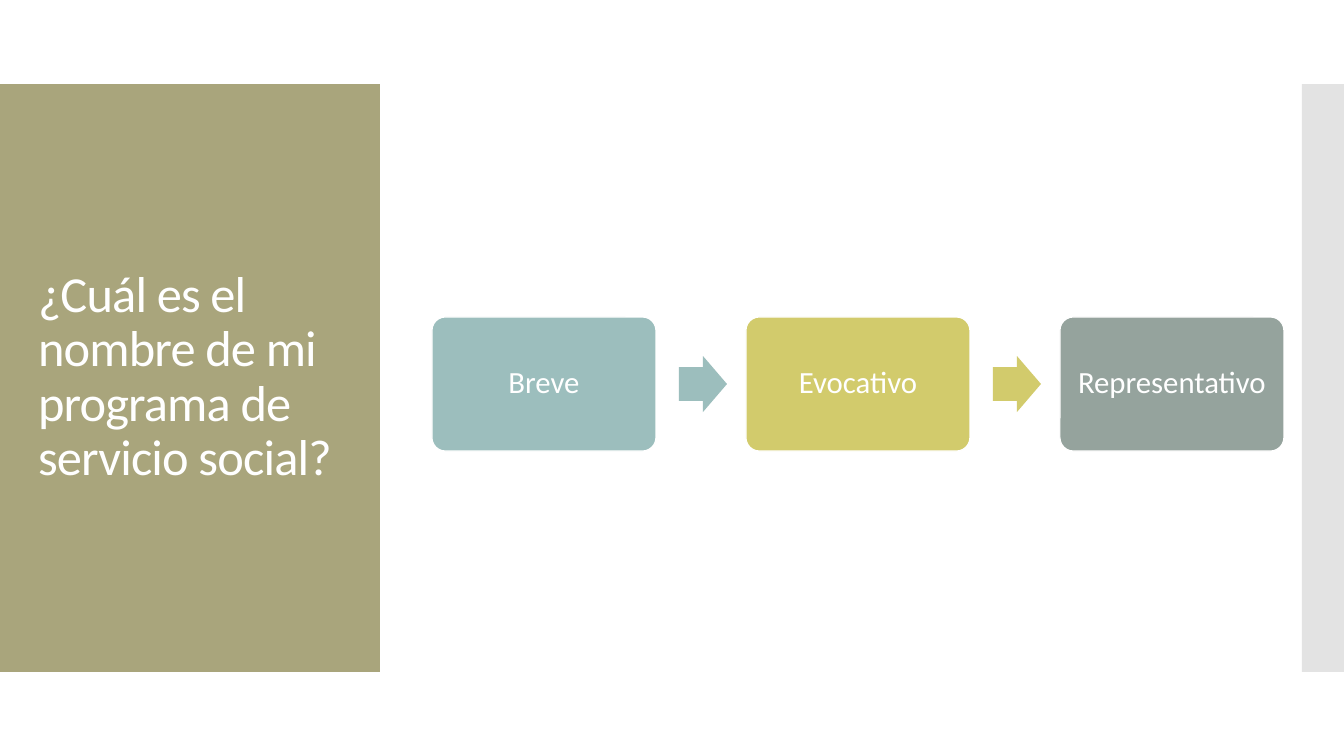
from lxml.etree import SubElement
from pptx import Presentation
from pptx.dml.color import RGBColor
from pptx.enum.shapes import MSO_SHAPE as Shape
from pptx.enum.text import MSO_ANCHOR as Anchor, PP_ALIGN as Align
from pptx.oxml.ns import qn
from pptx.util import Emu, Pt

# Content
TITLE = "¿Cuál es el nombre de mi programa de servicio social?"
STEPS = [("Breve", "9CBEBD"), ("Evocativo", "D2CB6C"), ("Representativo", "95A39D")]
WHITE = "FFFFFF"
FONT = {"name": "Calibri"}

# Layout in px: left, top, width, height
SLIDE_SIZE = (1344, 756)
TITLE_PANEL = (0, 84, 380, 588)
SIDE_STRIP = (1302, 84, 42, 588)
TITLE_BOX = (28, 124, 325, 507)
STEP_LEFT, STEP_WIDTH, STEP_HEIGHT, STEP_PITCH = 432, 224, 134, 314
ARROW_WIDTH, ARROW_HEIGHT = 48, 56
MIDDLE = 384
EMU_PER_INCH, PX_PER_INCH = 914400, 100.8


def px(length):
    return Emu(round(length * EMU_PER_INCH / PX_PER_INCH))


def color(hex_value):
    return RGBColor.from_string(hex_value)


def add_block(slide, kind, box, fill, adjustments=()):
    shape = slide.shapes.add_shape(kind, *map(px, box))
    shape.shadow.inherit = False
    shape.fill.solid()
    shape.fill.fore_color.rgb = color(fill)
    shape.line.fill.background()
    for index, value in enumerate(adjustments):
        shape.adjustments[index] = value
    return shape


def write(shape, text, size, align, inset):
    frame = shape.text_frame
    frame_format = {"word_wrap": True, "vertical_anchor": Anchor.MIDDLE}
    for side in ("left", "right", "top", "bottom"):
        frame_format["margin_" + side] = px(inset)
    for name, value in frame_format.items():
        setattr(frame, name, value)
    paragraph = frame.paragraphs[0]
    paragraph.alignment = align
    paragraph.line_spacing = 0.9
    run = paragraph.add_run()
    run.text = text
    for name, value in {**FONT, "size": Pt(size)}.items():
        setattr(run.font, name, value)
    run.font.color.rgb = color(WHITE)
    return run


def main():
    presentation = Presentation()
    presentation.slide_width, presentation.slide_height = map(px, SLIDE_SIZE)
    slide = presentation.slides.add_slide(presentation.slide_layouts[6])

    # Title panel and translucent side strip
    add_block(slide, Shape.RECTANGLE, TITLE_PANEL, "A9A57C")
    strip = add_block(slide, Shape.RECTANGLE, SIDE_STRIP, "C8C8C8")
    strip_color = strip.fill._xPr.find(qn("a:solidFill"))[0]
    SubElement(strip_color, qn("a:alpha"), val="50000")

    # Title with slightly tightened letters
    title = slide.shapes.add_textbox(*map(px, TITLE_BOX))
    run = write(title, TITLE, 36, Align.LEFT, 10)
    run.font._element.set("spc", "-60")

    # Steps, each followed by an arrow in its own colour
    gap = STEP_PITCH - STEP_WIDTH
    for index, (label, fill) in enumerate(STEPS):
        left = STEP_LEFT + index * STEP_PITCH
        box = (left, MIDDLE - STEP_HEIGHT / 2, STEP_WIDTH, STEP_HEIGHT)
        step = add_block(slide, Shape.ROUNDED_RECTANGLE, box, fill, [0.1])
        step.line.color.rgb = color(WHITE)
        step.line.width = Pt(0.85)
        write(step, label, 22, Align.CENTER, 9)
        if index < len(STEPS) - 1:
            arrow_left = left + STEP_WIDTH + (gap - ARROW_WIDTH) / 2 + 2
            arrow_box = (arrow_left, MIDDLE - ARROW_HEIGHT / 2, ARROW_WIDTH, ARROW_HEIGHT)
            add_block(slide, Shape.RIGHT_ARROW, arrow_box, fill, [0.6, 0.5])

    presentation.save("out.pptx")


if __name__ == "__main__":
    main()
